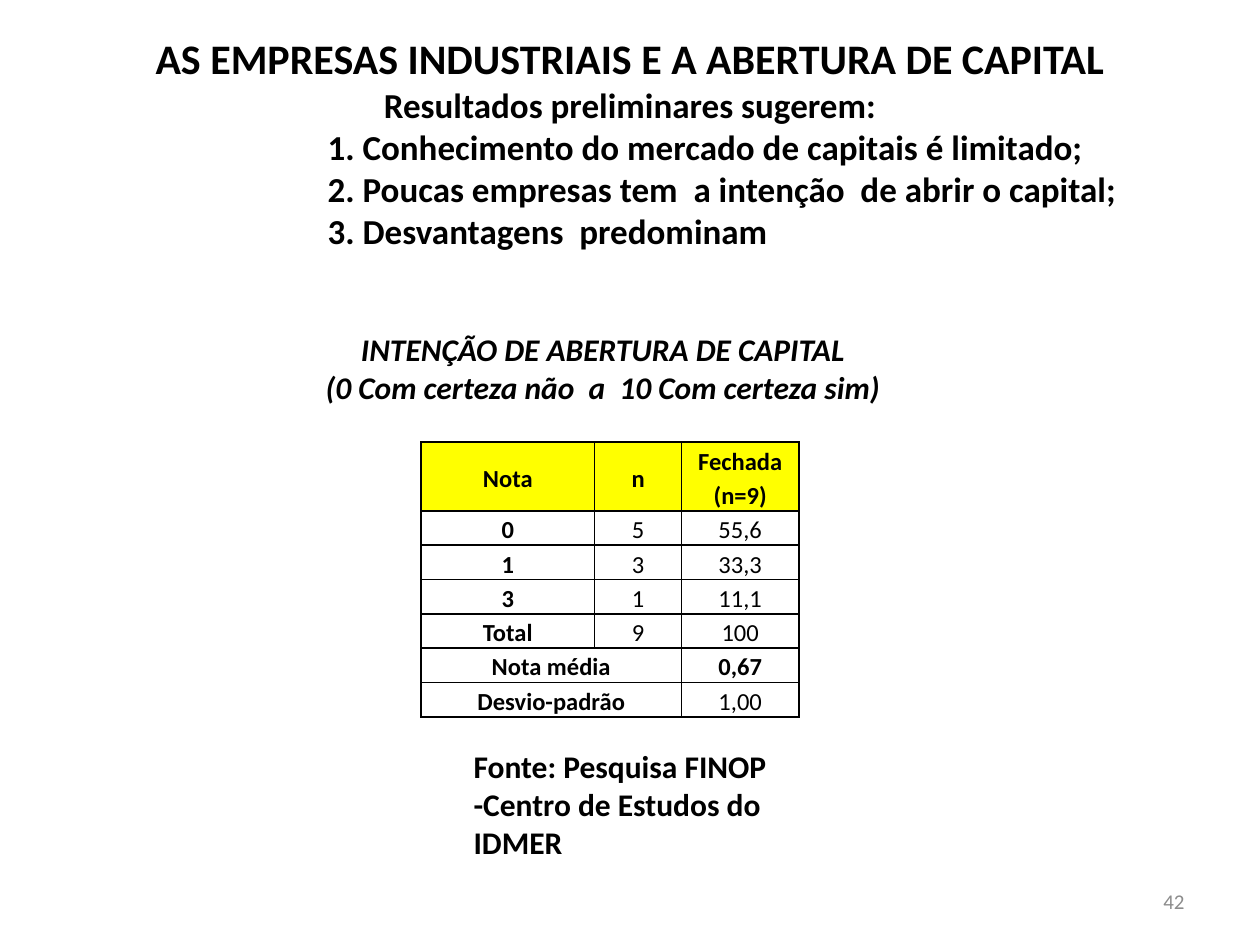
from dataclasses import dataclass

from lxml.etree import SubElement
from pptx import Presentation
from pptx.dml.color import RGBColor
from pptx.enum.text import MSO_ANCHOR, MSO_AUTO_SIZE, PP_ALIGN
from pptx.oxml.ns import qn
from pptx.util import Inches, Pt

# Content
HEADLINE = "AS EMPRESAS INDUSTRIAIS E A ABERTURA DE CAPITAL"
LEAD = "Resultados preliminares sugerem:"
FINDINGS = [
    "1. Conhecimento do mercado de capitais é limitado;",
    "2. Poucas empresas tem  a intenção  de abrir o capital;",
    "3. Desvantagens  predominam",
]
CAPTION = "INTENÇÃO DE ABERTURA DE CAPITAL\n(0 Com certeza não  a  10 Com certeza sim)"
HEADER = ("Nota", "n", "Fechada\n(n=9)")
SCORES = [("0", "5", "55,6"), ("1", "3", "33,3"), ("3", "1", "11,1"), ("Total", "9", "100")]
SUMMARY = [("Nota média", "", "0,67"), ("Desvio-padrão", "", "1,00")]
BOLD_VALUES = {"0,67"}
SOURCE = "Fonte: Pesquisa FINOP -Centro de Estudos do IDMER"
PAGE_NUMBER = "42"


@dataclass(frozen=True)
class Theme:
    font: str = "Calibri"
    ink: str = "000000"
    muted: str = "8C8C8C"
    header_fill: str = "FFFF00"
    body_fill: str = "FFFFFF"
    headline: int = 24
    lead: int = 20
    note: int = 18
    cell: int = 14
    page: int = 12


THEME = Theme()

# Layout in inches
SLIDE_WIDTH, SLIDE_HEIGHT = 10, 7.5
FINDING_INDENT = 2.5
TABLE_LEFT, TABLE_TOP = 3.34, 3.51
COLUMN_WIDTHS = (1.38, 0.69, 0.93)
ROW_HEIGHT = 0.27
HEADER_HEIGHT = 0.53


def write(paragraph, text, size, color=THEME.ink, bold=True, italic=False,
          align=PP_ALIGN.LEFT, indent=0, line_spacing=None):
    paragraph.text = text
    paragraph.alignment = align
    if line_spacing:
        paragraph.line_spacing = line_spacing
    if indent:
        properties = paragraph._p.get_or_add_pPr()
        properties.set("marL", str(Inches(indent)))
        properties.set("indent", "0")
    for run in paragraph.runs:
        run.font.name = THEME.font
        run.font.size = Pt(size)
        run.font.bold = bold
        run.font.italic = italic
        run.font.color.rgb = RGBColor.from_string(color)


def place(shape, left, top, width, height, anchor=MSO_ANCHOR.TOP):
    shape.left, shape.top = Inches(left), Inches(top)
    shape.width, shape.height = Inches(width), Inches(height)
    frame = shape.text_frame
    frame.word_wrap = True
    frame.auto_size = MSO_AUTO_SIZE.NONE
    frame.vertical_anchor = anchor
    return frame


def add_text(slide, text, box, size, anchor=MSO_ANCHOR.TOP, **text_format):
    frame = place(slide.shapes.add_textbox(0, 0, 0, 0), *box, anchor=anchor)
    write(frame.paragraphs[0], text, size, **text_format)


def add_borders(cell):
    properties = cell._tc.get_or_add_tcPr()
    for position, side in enumerate(("lnL", "lnR", "lnT", "lnB")):
        line = SubElement(properties, qn(f"a:{side}"), w=str(Pt(1)))
        fill = SubElement(line, qn("a:solidFill"))
        SubElement(fill, qn("a:srgbClr"), val=THEME.ink)
        properties.insert(position, line)


def add_title(slide):
    lines = [(HEADLINE, dict(size=THEME.headline, align=PP_ALIGN.CENTER)),
             (LEAD, dict(size=THEME.lead, align=PP_ALIGN.CENTER))]
    lines += [(text, dict(size=THEME.lead, indent=FINDING_INDENT)) for text in FINDINGS]
    frame = place(slide.shapes.title, 0, 0.21, SLIDE_WIDTH, 1.85)
    for index, (text, text_format) in enumerate(lines):
        paragraph = frame.add_paragraph() if index else frame.paragraphs[0]
        write(paragraph, text, **text_format)


def add_score_table(slide):
    rows = [HEADER, *SCORES, *SUMMARY]
    heights = [HEADER_HEIGHT] + [ROW_HEIGHT] * (len(rows) - 1)
    table = slide.shapes.add_table(
        len(rows), len(HEADER), Inches(TABLE_LEFT), Inches(TABLE_TOP),
        Inches(sum(COLUMN_WIDTHS)), Inches(sum(heights))).table
    for column, width in zip(table.columns, COLUMN_WIDTHS):
        column.width = Inches(width)
    for row, height in zip(table.rows, heights):
        row.height = Inches(height)

    for row_index, row in enumerate(rows):
        is_header = row_index == 0
        for column_index, text in enumerate(row):
            cell = table.cell(row_index, column_index)
            cell.vertical_anchor = MSO_ANCHOR.MIDDLE
            cell.margin_left = cell.margin_right = Inches(0.07)
            cell.margin_top = cell.margin_bottom = 0
            cell.fill.solid()
            cell.fill.fore_color.rgb = RGBColor.from_string(
                THEME.header_fill if is_header else THEME.body_fill)
            add_borders(cell)
            write(cell.text_frame.paragraphs[0], text, THEME.cell,
                  bold=is_header or column_index == 0 or text in BOLD_VALUES,
                  align=PP_ALIGN.CENTER, line_spacing=1.15)
        if row in SUMMARY:
            table.cell(row_index, 0).merge(table.cell(row_index, 1))


def main():
    presentation = Presentation()
    presentation.slide_width = Inches(SLIDE_WIDTH)
    presentation.slide_height = Inches(SLIDE_HEIGHT)
    slide = presentation.slides.add_slide(presentation.slide_layouts[5])

    # Title and findings
    add_title(slide)
    # Score table with its caption and source
    add_text(slide, CAPTION, (2.4, 2.57, 4.77, 0.71), THEME.note,
             italic=True, align=PP_ALIGN.CENTER)
    add_score_table(slide)
    add_text(slide, SOURCE, (3.66, 5.88, 2.68, 1.01), THEME.note)
    # Page number
    add_text(slide, PAGE_NUMBER, (7.17, 6.95, 2.33, 0.4), THEME.page,
             anchor=MSO_ANCHOR.MIDDLE, color=THEME.muted, bold=False, align=PP_ALIGN.RIGHT)

    presentation.save("out.pptx")


if __name__ == "__main__":
    main()
